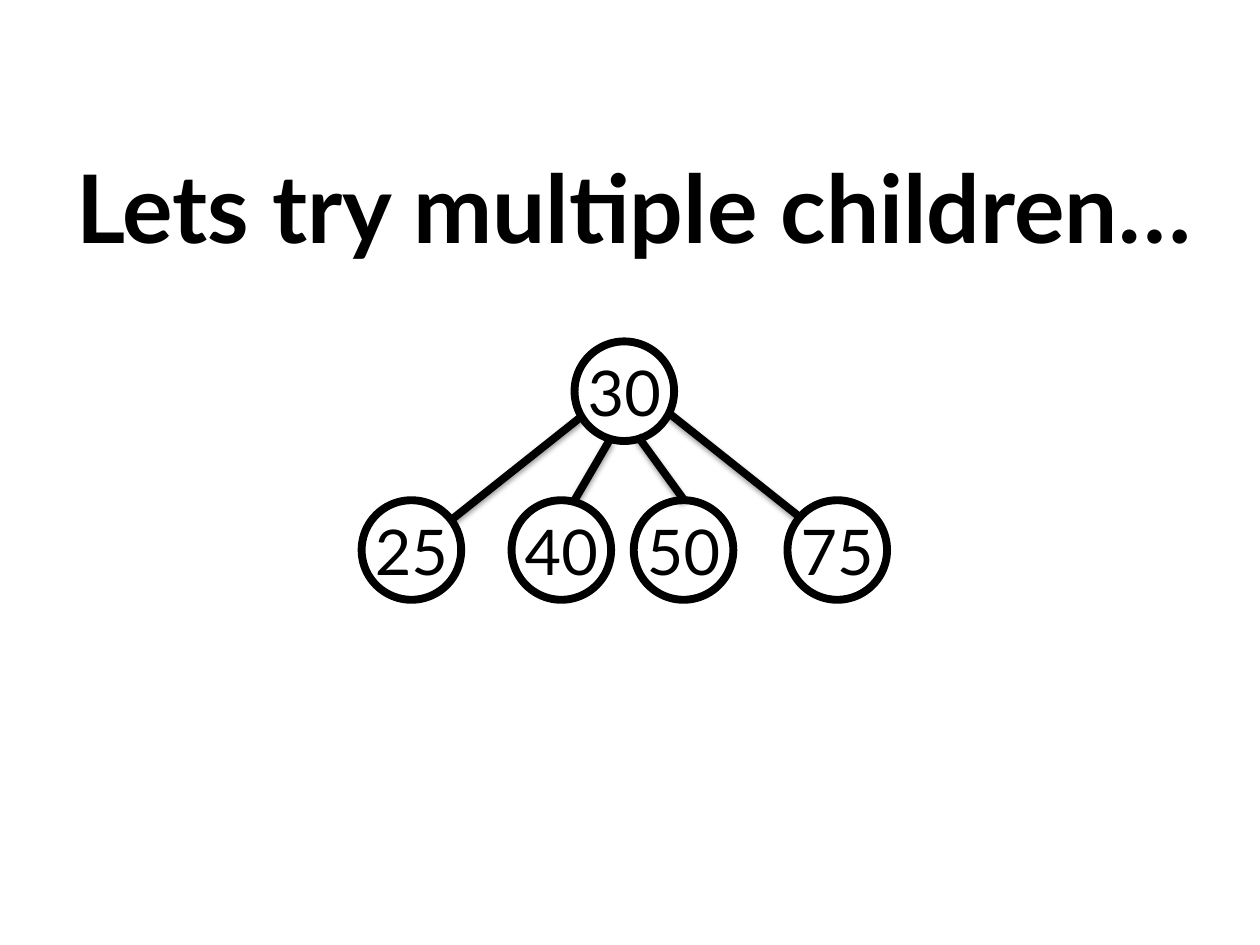
from lxml import etree
from pptx import Presentation
from pptx import util as u
from pptx.dml.color import RGBColor
from pptx.enum import shapes, text
from pptx.oxml.ns import nsdecls

COLORS = {"ink": "000000"}
SHADOW = (
    f'<a:effectLst {nsdecls("a")}>'
    '<a:outerShdw blurRad="40000" dist="20000" dir="5400000" rotWithShape="0">'
    f'<a:srgbClr val="{COLORS["ink"]}"><a:alpha val="38000"/></a:srgbClr>'
    '</a:outerShdw></a:effectLst>'
)


class TreeSlide:
    font = "Lato"
    node_size = 0.79
    line_width = u.Pt(4.5)
    ink = RGBColor.from_string(COLORS["ink"])

    def __init__(self, s):
        self.s = s

    def label(self, sp, words, **fmt):
        tf = sp.text_frame
        tf.vertical_anchor = text.MSO_ANCHOR.MIDDLE
        p = tf.paragraphs[0]
        p.alignment = text.PP_ALIGN.CENTER
        r = p.add_run()
        r.text = words
        for name, value in {"name": self.font, **fmt}.items():
            setattr(r.font, name, value)
        r.font.color.rgb = self.ink
        return tf

    def outline(self, sp):
        sp.line.color.rgb = self.ink
        sp.line.width = self.line_width

    def title(self, words, *box):
        sp = self.s.shapes.add_textbox(*map(u.Inches, box))
        self.label(sp, words, size=u.Pt(54), bold=True).word_wrap = True

    def edge(self, *ends):
        sp = self.s.shapes.add_connector(
            shapes.MSO_CONNECTOR.STRAIGHT, *map(u.Inches, ends))
        self.outline(sp)
        sp._element.spPr.append(etree.fromstring(SHADOW))

    def node(self, words, left, top):
        box = (left, top, self.node_size, self.node_size)
        sp = self.s.shapes.add_shape(shapes.MSO_SHAPE.OVAL, *map(u.Inches, box))
        sp.shadow.inherit = False
        sp.fill.background()
        self.outline(sp)
        self.label(sp, words, size=u.Pt(36)).word_wrap = False


def main():
    prs = Presentation()
    prs.slide_width, prs.slide_height = u.Inches(10), u.Inches(7.5)
    slide = TreeSlide(prs.slides.add_slide(prs.slide_layouts[6]))

    slide.title("Lets try multiple children…", 0.41, 1.01, 9.24, 1.25)

    # Root
    slide.node("30", 4.56, 2.71)

    # Children: value, left, edge from the root
    children = [
        ("25", 2.87, (4.61, 3.31, 3.59, 4.12)),
        ("40", 4.06, (4.84, 3.49, 4.56, 3.97)),
        ("50", 5.03, (5.06, 3.46, 5.43, 3.97)),
        ("75", 6.25, (5.31, 3.28, 6.33, 4.09)),
    ]
    for value, left, ends in children:
        slide.edge(*ends)
        slide.node(value, left, 3.97)

    prs.save("out.pptx")


if __name__ == "__main__":
    main()
